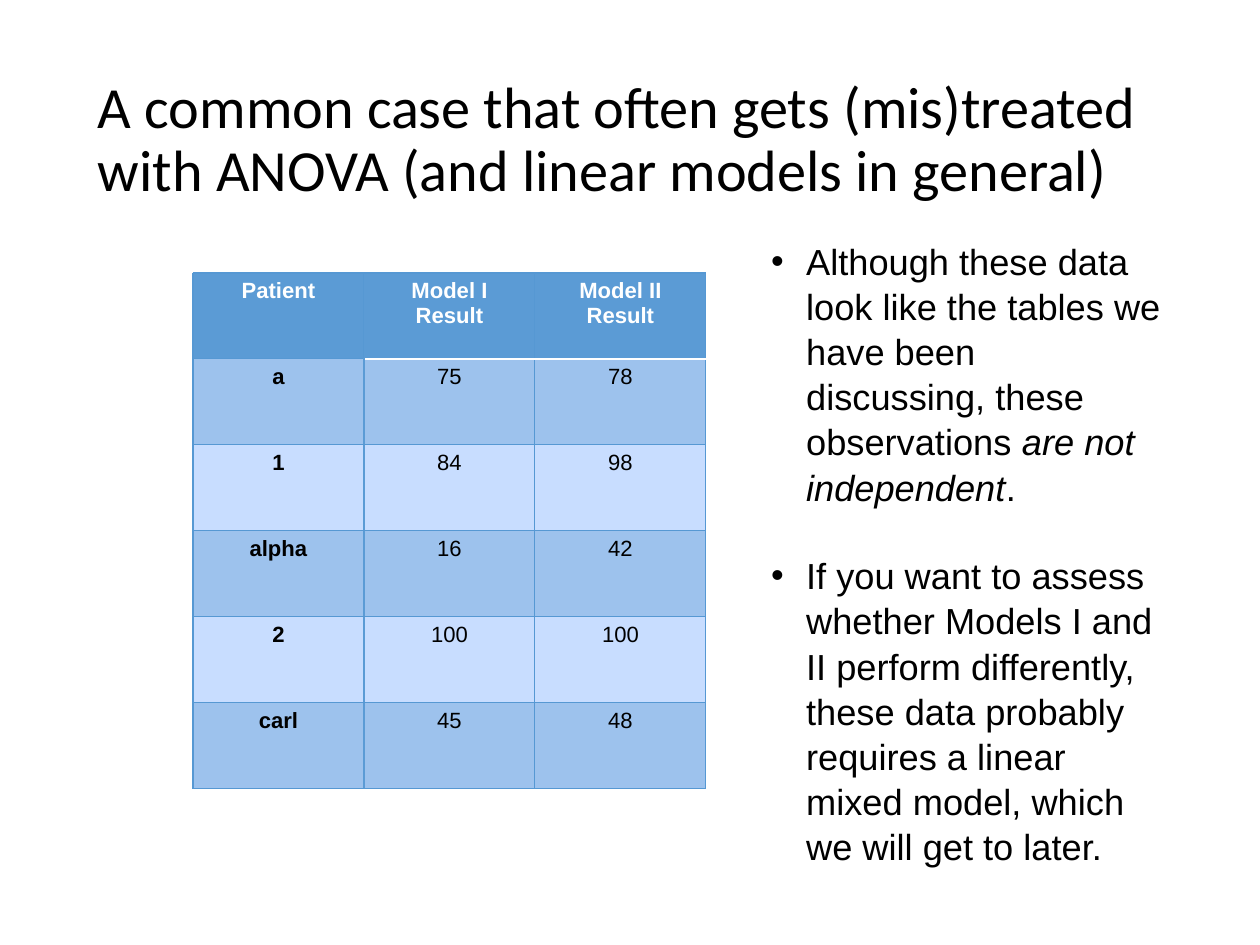
from lxml.etree import SubElement
from pptx import Presentation
from pptx.dml.color import RGBColor
from pptx.enum.text import MSO_ANCHOR as Anchor, MSO_AUTO_SIZE as AutoSize, PP_ALIGN as Align
from pptx.oxml.ns import qn
from pptx.util import Pt

PX = 8064  # EMU in one px
BLUE, EDGE, BAND, PALE = "5B9BD5", "5698D3", "9DC2ED", "C8DDFF"
BLACK, WHITE = "000000", "FFFFFF"
THIN, THICK = 0.75, 2

TITLE = "A common case that often gets (mis)treated with ANOVA (and linear models in general)"
RESULTS = [
    ("Patient", "Model I Result", "Model II Result"),
    ("a", "75", "78"),
    ("1", "84", "98"),
    ("alpha", "16", "42"),
    ("2", "100", "100"),
    ("carl", "45", "48"),
]
# Each remark is a list of (text, italic) spans
REMARKS = [
    [("Although these data look like the tables we have been discussing, "
      "these observations ", False), ("are not independent", True), (".", False)],
    [("If you want to assess whether Models I and II perform differently, these data "
      "probably requires a linear mixed model, which we will get to later.", False)],
]


def px(*lengths):
    return [length * PX for length in lengths]


def rgb(color):
    return RGBColor.from_string(color)


def set_all(target, values):
    for name, value in values.items():
        setattr(target, name, value)


def add_span(para, text, size, color=BLACK, font="Arial", **styles):
    span = para.add_run()
    span.text = text
    set_all(span.font, dict(name=font, size=Pt(size), **styles))
    span.font.color.rgb = rgb(color)


def add_title(page):
    title = page.shapes.title
    set_all(title, dict(zip(("left", "top", "width", "height"), px(86, 50, 1086, 183))))
    frame = title.text_frame
    inset, = px(12)
    set_all(frame, dict(word_wrap=True, auto_size=AutoSize.NONE, vertical_anchor=Anchor.MIDDLE,
                        margin_left=inset, margin_right=inset,
                        margin_top=inset, margin_bottom=inset))
    para = frame.paragraphs[0]
    set_all(para, dict(alignment=Align.LEFT, line_spacing=0.9))
    add_span(para, TITLE, 37, font="Calibri")


def set_borders(cell, borders):
    properties = cell._tc.get_or_add_tcPr()
    for index, side in enumerate("LRTB"):
        color, width = borders.get(side, (EDGE, THIN))
        line = properties.makeelement(qn(f"a:ln{side}"), {"w": str(Pt(width))})
        fill = SubElement(line, qn("a:solidFill"))
        SubElement(fill, qn("a:srgbClr"), val=color)
        properties.insert(index, line)


def cell_borders(row, column):
    borders = {}
    if column > 0 and row < 2:  # white rule under the result headings
        borders["B" if row == 0 else "T"] = (WHITE, THICK)
    if row > 0 and column < 2:  # heavy rule beside the patients
        borders["R" if column == 0 else "L"] = (BLUE, THICK)
    return borders


def add_results(page):
    rows, columns = len(RESULTS), len(RESULTS[0])
    table = page.shapes.add_table(rows, columns, *px(193, 273, 171 * columns, 86 * rows)).table
    side, = px(14)
    for row, texts in enumerate(RESULTS):
        for column, text in enumerate(texts):
            cell = table.cell(row, column)
            set_all(cell, dict(margin_left=side, margin_right=side))
            cell.fill.solid()
            fill = BLUE if row == 0 else BAND if row % 2 else PALE
            cell.fill.fore_color.rgb = rgb(fill)
            set_borders(cell, cell_borders(row, column))
            para = cell.text_frame.paragraphs[0]
            para.alignment = Align.CENTER
            add_span(para, text, 14, WHITE if row == 0 else BLACK,
                     bold=row == 0 or column == 0)


def set_bullet(para, indent):
    properties = para._p.get_or_add_pPr()
    properties.set("marL", str(indent))
    properties.set("indent", str(-indent))
    color = SubElement(properties, qn("a:buClr"))
    SubElement(color, qn("a:srgbClr"), val=BLACK)
    SubElement(properties, qn("a:buFont"), typeface="Arial")
    SubElement(properties, qn("a:buChar"), char="•")


def add_remarks(page):
    box = page.shapes.add_textbox(*px(760, 232, 413, 626))
    frame = box.text_frame
    set_all(frame, dict(word_wrap=True, auto_size=AutoSize.NONE))
    indent, = px(35)
    for number, spans in enumerate(REMARKS):
        para = frame.add_paragraph() if number else frame.paragraphs[0]
        set_all(para, dict(alignment=Align.LEFT, line_spacing=1.04,
                           space_before=Pt(27.6 if number else 0)))
        set_bullet(para, indent)
        for text, italic in spans:
            add_span(para, text, 23, italic=italic)


def main():
    deck = Presentation()
    deck.slide_width, deck.slide_height = px(1260, 945)
    page = deck.slides.add_slide(deck.slide_layouts.get_by_name("Title Only"))
    add_title(page)
    add_results(page)
    add_remarks(page)
    deck.save("out.pptx")


if __name__ == "__main__":
    main()
